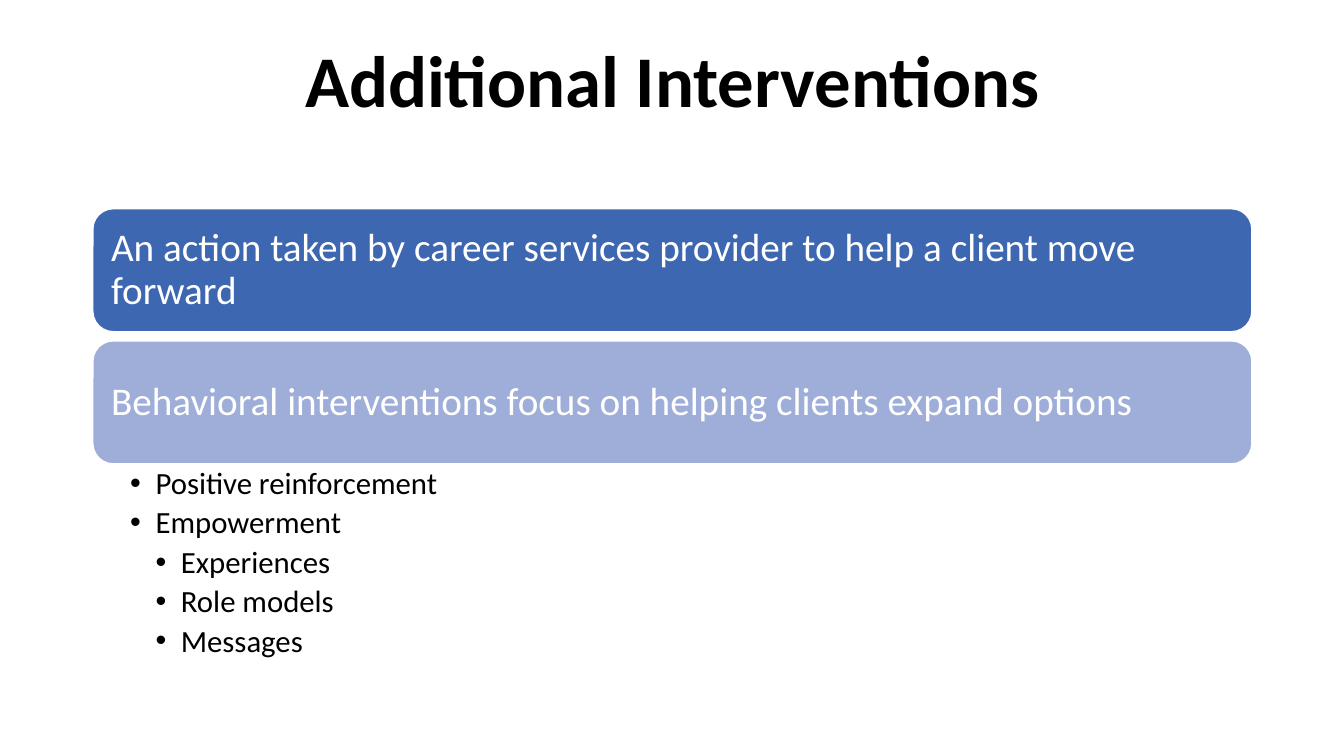
import pptx
import pptx.dml.color
import pptx.enum.shapes
import pptx.enum.text
import pptx.oxml
import pptx.oxml.ns
import pptx.util
from pptx.util import Cm

# Content
HEADING = "Additional Interventions"
BANNERS = [
    ("An action taken by career services provider to help a client move forward", "strong"),
    ("Behavioral interventions focus on helping clients expand options", "pale"),
]
METHODS = [  # text, level
    ("Positive reinforcement", 1),
    ("Empowerment", 1),
    ("Experiences", 2),
    ("Role models", 2),
    ("Messages", 2),
]
COLORS = {"strong": "3E67B2", "pale": "9FAED8", "white": "FFFFFF", "black": "000000"}
FONT = "Calibri"

# Layout
LEFT, WIDTH = Cm(2.34), Cm(29.21)
BANNER_TOP, BANNER_HEIGHT, BANNER_STEP = Cm(5.26), Cm(3.1), Cm(3.33)
METHODS_TOP = BANNER_TOP + BANNER_STEP + BANNER_HEIGHT
INDENT = Cm(0.64)


def rgb(name):
    return pptx.dml.color.RGBColor.from_string(COLORS[name])


def style(paragraph, size, color, bold=False):
    paragraph.line_spacing = 0.9
    paragraph.space_before = pptx.util.Pt(0)
    for font in [paragraph.font] + [run.font for run in paragraph.runs]:
        font.name, font.size, font.bold = FONT, pptx.util.Pt(size), bold
        font.color.rgb = rgb(color)


def set_frame(frame, anchor, left, top, right, bottom):
    frame.word_wrap = True
    frame.auto_size = pptx.enum.text.MSO_AUTO_SIZE.NONE
    frame.vertical_anchor = anchor
    frame.margin_left, frame.margin_top = Cm(left), Cm(top)
    frame.margin_right, frame.margin_bottom = Cm(right), Cm(bottom)


def place(placeholder, top, height):
    placeholder.left, placeholder.top = LEFT, top
    placeholder.width, placeholder.height = WIDTH, height


def add_bullet(paragraph, level):
    properties = paragraph._p.get_or_add_pPr()
    properties.set("marL", str(INDENT * level))
    properties.set("indent", str(-INDENT))
    namespace = pptx.oxml.ns.nsdecls("a")
    properties.append(pptx.oxml.parse_xml(f'<a:buFont {namespace} typeface="Arial"/>'))
    properties.append(pptx.oxml.parse_xml(f'<a:buChar {namespace} char="•"/>'))


def main():
    deck = pptx.Presentation()
    deck.slide_width, deck.slide_height = Cm(33.87), Cm(19.05)
    slide = deck.slides.add_slide(deck.slide_layouts[1])
    middle = pptx.enum.text.MSO_ANCHOR.MIDDLE

    # Title
    title = slide.shapes.title
    place(title, Cm(0.53), Cm(3.15))
    title.text_frame.text = HEADING
    set_frame(title.text_frame, middle, 0.25, 0.13, 0.25, 0.13)
    heading = title.text_frame.paragraphs[0]
    heading.alignment = pptx.enum.text.PP_ALIGN.CENTER
    style(heading, 52, "black", bold=True)

    # Banners
    for index, (statement, fill) in enumerate(BANNERS):
        banner = slide.shapes.add_shape(
            pptx.enum.shapes.MSO_SHAPE.ROUNDED_RECTANGLE,
            LEFT, BANNER_TOP + index * BANNER_STEP, WIDTH, BANNER_HEIGHT)
        banner.shadow.inherit = False
        banner.fill.solid()
        banner.fill.fore_color.rgb = rgb(fill)
        banner.line.color.rgb = rgb("white")
        banner.line.width = pptx.util.Pt(1)
        banner.text_frame.text = statement
        # The rounded corners already inset the text by 0.15 cm
        set_frame(banner.text_frame, middle, 0.31, 0.31, 0.31, 0.31)
        paragraph = banner.text_frame.paragraphs[0]
        paragraph.alignment = pptx.enum.text.PP_ALIGN.LEFT
        style(paragraph, 28, "white")

    # Methods list
    methods = slide.placeholders[1]
    place(methods, METHODS_TOP, Cm(5.31))
    frame = methods.text_frame
    frame.text = "\n".join(text for text, level in METHODS)
    set_frame(frame, pptx.enum.text.MSO_ANCHOR.TOP, 0.94, 0.1, 0.56, 0.1)
    for paragraph, (text, level) in zip(frame.paragraphs, METHODS):
        paragraph.level = level
        add_bullet(paragraph, level)
        paragraph.space_after = pptx.util.Pt(4.4)
        style(paragraph, 22, "black")

    deck.save("out.pptx")


if __name__ == "__main__":
    main()
